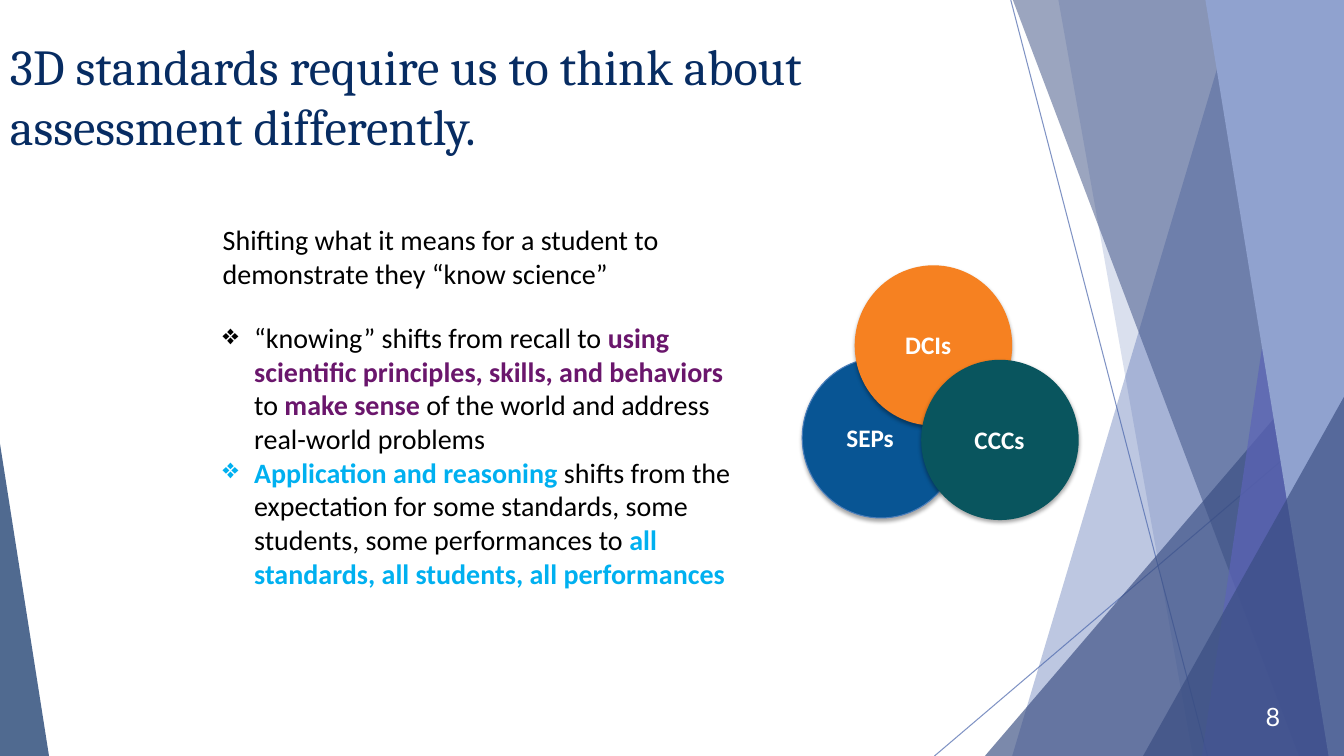
"""Build a slide on how 3D standards change assessment."""
from dataclasses import dataclass

from lxml import etree
from pptx import Presentation
from pptx import util as u
from pptx.dml import color
from pptx.enum import shapes, text
from pptx.oxml import ns

Pt = u.Pt
WIDTH, HEIGHT = 960, 540
NAVY, BLACK, WHITE = "072C62", "000000", "FFFFFF"
PURPLE, CYAN = "6A166C", "00B0F0"
BLUE, DARK_BLUE = "4A66AC", "384C81"


@dataclass
class Ray:
    x1: float
    y1: float
    x2: float
    y2: float


@dataclass
class Band:
    top_x: float
    bottom_x: float
    fill: str
    opacity: int


@dataclass
class Wedge:
    left: float
    top: float
    width: float
    peak: int
    fill: str
    opacity: int


@dataclass
class Circle:
    label: str
    left: float
    top: float
    label_left: float
    label_top: float
    fill: str
    line: str = ""


@dataclass
class Span:
    text: str
    colour: str = BLACK
    bold: bool = False


RAYS = [Ray(722, 0, 862.5, HEIGHT), Ray(WIDTH, 291, 667.5, HEIGHT)]
FACETS = [
    Band(884, 723, BLUE, 36),
    Band(756, 852, BLUE, 20),
    Wedge(703.5, 240.5, 256.5, 1, DARK_BLUE, 66),
    Band(723.5, 928, DARK_BLUE, 50),
    Band(938, 858.5, "5C64B7", 70),
    Band(861, 949, "90A2CF", 100),
    Wedge(816.5, 283.5, 143.5, 1, DARK_BLUE, 66),
    Wedge(0, 317, 35, 0, NAVY, 70),
]
CIRCLES = [
    Circle("SEPs", 573, 255.5, 597.5, 298, "085594", "4A7DBA"),
    Circle("DCIs", 610.5, 189.5, 639.5, 232, "F68121"),
    Circle("CCCs", 658, 257, 689, 299.5, "09555E"),
]
INTRO = [Span("Shifting what it means for a student to demonstrate they “know science”")]
BULLETS = [
    [
        Span("“knowing” shifts from recall to "),
        Span("using scientific principles, skills, and behaviors ", PURPLE, True),
        Span("to "),
        Span("make sense", PURPLE, True),
        Span(" of the world and address real-world problems"),
    ],
    [
        Span("Application and reasoning ", CYAN, True),
        Span("shifts from the expectation for some standards, some students, "
             "some performances to "),
        Span("all standards, all students, all performances", CYAN, True),
    ],
]


def rgb(value: str) -> color.RGBColor:
    return color.RGBColor.from_string(value)


def add_node(parent, tag: str, **attrs):
    node = etree.SubElement(parent, ns.qn(tag))
    for name, value in attrs.items():
        node.set(name, str(value))
    return node


def set_opacity(parent, percent: int) -> None:
    if percent < 100:
        clr = parent.find(ns.qn("a:solidFill")).find(ns.qn("a:srgbClr"))
        add_node(clr, "a:alpha", val=percent * 1000)


def paint(s, fill: str, opacity: int = 100) -> None:
    s.shadow.inherit = False
    s.fill.solid()
    s.fill.fore_color.rgb = rgb(fill)
    s.line.fill.background()
    set_opacity(s.element.spPr, opacity)


def draw_ray(sp, ray: Ray) -> None:
    s = sp.add_connector(shapes.MSO_CONNECTOR.STRAIGHT,
                         Pt(ray.x1), Pt(ray.y1), Pt(ray.x2), Pt(ray.y2))
    s.line.width = Pt(0.75)
    s.line.color.rgb = rgb(BLUE)
    set_opacity(s.line._get_or_add_ln(), 70)
    add_node(s.element.spPr, "a:effectLst")


def draw_facet(sp, facet: Band | Wedge) -> None:
    if isinstance(facet, Band):
        builder = sp.build_freeform(Pt(facet.top_x), 0)
        corners = [(WIDTH, 0), (WIDTH, HEIGHT), (facet.bottom_x, HEIGHT)]
        builder.add_line_segments([(Pt(x), Pt(y)) for x, y in corners])
        s = builder.convert_to_shape()
    else:
        s = sp.add_shape(shapes.MSO_SHAPE.ISOSCELES_TRIANGLE, Pt(facet.left),
                         Pt(facet.top), Pt(facet.width), Pt(HEIGHT - facet.top))
        s.adjustments[0] = facet.peak
    paint(s, facet.fill, facet.opacity)


def add_box(sp, left: float, top: float, width: float, height: float):
    tf = sp.add_textbox(Pt(left), Pt(top), Pt(width), Pt(height)).text_frame
    tf.word_wrap = True
    return tf


def write(p, spans: list[Span], size: float, font: str = "Calibri") -> None:
    p.font.size, p.font.name = Pt(size), font
    for span in spans:
        r = p.add_run()
        r.text = span.text
        r.font.size, r.font.name = Pt(size), font
        r.font.bold = span.bold
        r.font.color.rgb = rgb(span.colour)


def draw_circle(sp, circle: Circle) -> None:
    s = sp.add_shape(shapes.MSO_SHAPE.OVAL, Pt(circle.left), Pt(circle.top),
                     Pt(112.5), Pt(114.5))
    paint(s, circle.fill)
    if circle.line:
        s.line.color.rgb = rgb(circle.line)
        s.line.width = Pt(0.75)
    shadow = add_node(s.element.spPr.find(ns.qn("a:effectLst")), "a:outerShdw",
                      blurRad=Pt(3.1), dist=Pt(1.8), dir=90 * 60000, rotWithShape=0)
    clr = add_node(shadow, "a:srgbClr", val=BLACK)
    add_node(clr, "a:alpha", val=35000)
    tf = add_box(sp, circle.label_left, circle.label_top, 57, 29)
    write(tf.paragraphs[0], [Span(circle.label, WHITE, True)], 18)


def add_bullet(p, colour: str) -> None:
    pPr = p._p.get_or_add_pPr()
    pPr.set("marL", str(Pt(22.5)))
    pPr.set("indent", str(-Pt(22.5)))
    add_node(add_node(pPr, "a:buClr"), "a:srgbClr", val=colour)
    add_node(pPr, "a:buChar", char="❖")


def main() -> None:
    prs = Presentation()
    prs.slide_width, prs.slide_height = Pt(WIDTH), Pt(HEIGHT)
    sp = prs.slides.add_slide(prs.slide_layouts[6]).shapes
    for ray in RAYS:
        draw_ray(sp, ray)
    for facet in FACETS:
        draw_facet(sp, facet)
    title = Span("3D standards require us to think about assessment differently.", NAVY)
    write(add_box(sp, 0, 21.5, 648, 90).paragraphs[0], [title], 36, "Cambria")
    for circle in CIRCLES:
        draw_circle(sp, circle)

    tf = add_box(sp, 152, 155.5, 384.5, 317.5)
    write(tf.paragraphs[0], INTRO, 20)
    tf.paragraphs[0].space_after = Pt(22)
    for spans in BULLETS:
        p = tf.add_paragraph()
        write(p, spans, 20)
        add_bullet(p, spans[0].colour)

    tf = add_box(sp, 867.5, 497, 54, 29)
    tf.vertical_anchor = text.MSO_ANCHOR.MIDDLE
    tf.paragraphs[0].alignment = text.PP_ALIGN.RIGHT
    write(tf.paragraphs[0], [Span("8", WHITE)], 18, "Lato")
    prs.save("out.pptx")


if __name__ == "__main__":
    main()
